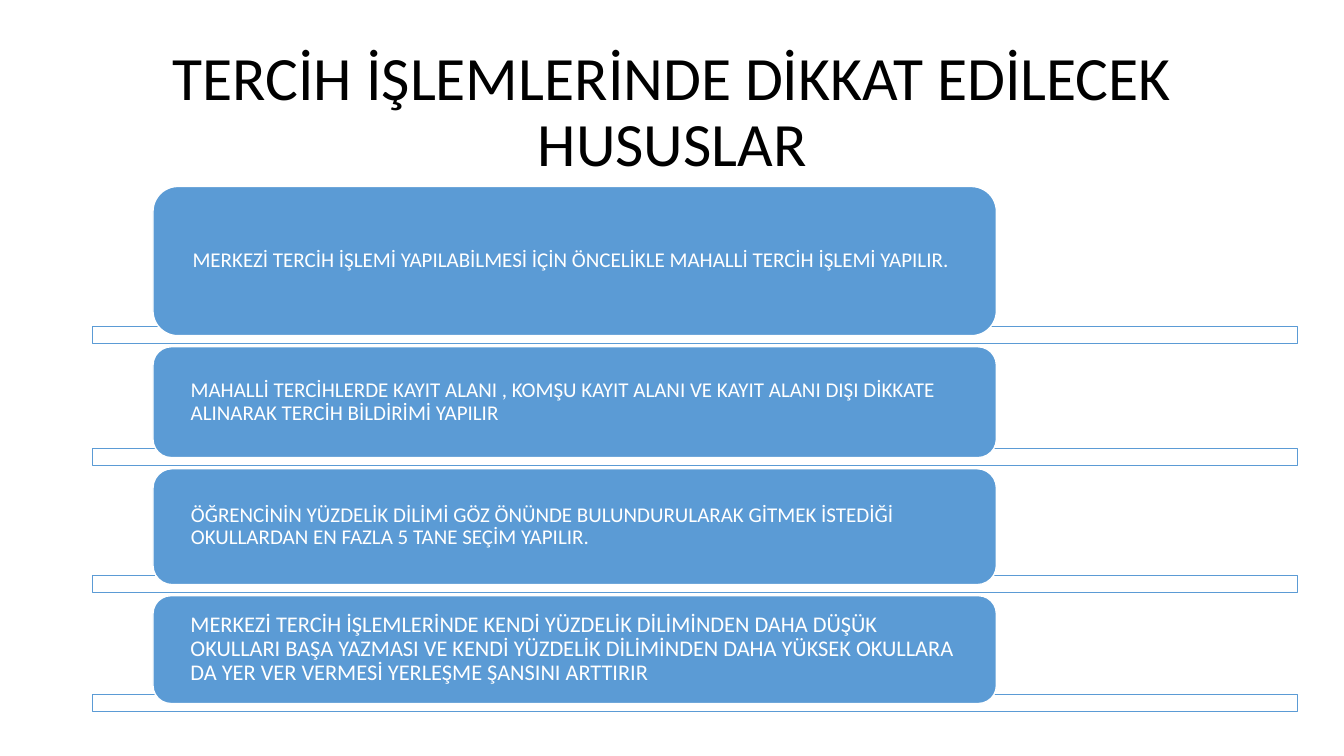
from dataclasses import dataclass

from lxml.etree import SubElement
from pptx import Presentation
from pptx.dml.color import RGBColor
from pptx.enum.shapes import MSO_SHAPE
from pptx.enum.text import MSO_ANCHOR, PP_ALIGN
from pptx.oxml.ns import qn
from pptx.util import Inches, Pt


@dataclass(frozen=True)
class Theme:
    font: str = "Calibri"
    blue: RGBColor = RGBColor(0x5B, 0x9B, 0xD5)
    white: RGBColor = RGBColor(0xFF, 0xFF, 0xFF)
    black: RGBColor = RGBColor(0, 0, 0)
    title: int = 44
    body: int = 15
    body_large: int = 16
    line: int = 1


THEME = Theme()
TITLE = "TERCİH İŞLEMLERİNDE DİKKAT EDİLECEK HUSUSLAR"

# Each card: height in grid rows, type size, text
CARDS = [
    (148, THEME.body,
     "MERKEZİ TERCİH İŞLEMİ YAPILABİLMESİ İÇİN ÖNCELİKLE MAHALLİ TERCİH İŞLEMİ YAPILIR."),
    (110, THEME.body,
     "MAHALLİ TERCİHLERDE KAYIT ALANI , KOMŞU KAYIT ALANI VE KAYIT ALANI DIŞI DİKKATE "
     "ALINARAK TERCİH BİLDİRİMİ YAPILIR"),
    (115, THEME.body,
     "ÖĞRENCİNİN YÜZDELİK DİLİMİ GÖZ ÖNÜNDE BULUNDURULARAK GİTMEK İSTEDİĞİ "
     "OKULLARDAN EN FAZLA 5 TANE SEÇİM YAPILIR."),
    (107, THEME.body_large,
     "MERKEZİ TERCİH İŞLEMLERİNDE KENDİ YÜZDELİK DİLİMİNDEN DAHA DÜŞÜK OKULLARI BAŞA "
     "YAZMASI VE KENDİ YÜZDELİK DİLİMİNDEN DAHA YÜKSEK OKULLARA DA YER VER VERMESİ "
     "YERLEŞME ŞANSINI ARTTIRIR"),
]
GAP, BAR, OVERLAP = 11, 17, 9  # in grid rows
ROWS = sum(rows for rows, _, _ in CARDS) + GAP * (len(CARDS) - 1) + BAR - OVERLAP


def write(shape, text, size, color, align):
    tf = shape.text_frame
    tf.word_wrap = True
    tf.vertical_anchor = MSO_ANCHOR.MIDDLE
    p = tf.paragraphs[0]
    p.text = text
    p.alignment = align
    p.line_spacing = 0.9
    p.font.name = THEME.font
    p.font.size = Pt(size)
    p.font.color.rgb = color
    return tf


def add_box(s, kind, box, fill, line):
    sp = s.shapes.add_shape(kind, *(Inches(v) for v in box))
    sp.shadow.inherit = False
    sp.fill.solid()
    sp.fill.fore_color.rgb = fill
    sp.line.color.rgb = line
    sp.line.width = Pt(THEME.line)
    return sp


def add_title(s, box):
    sp = s.shapes.add_textbox(*(Inches(v) for v in box))
    write(sp, TITLE, THEME.title, THEME.black, PP_ALIGN.CENTER)


def add_card_list(s, box):
    left, top, width, height = box
    row = height / ROWS
    for rows, size, text in CARDS:
        bottom = top + rows * row

        # Pale bar behind the card's lower edge
        bar = add_box(s, MSO_SHAPE.RECTANGLE,
                      (left, bottom - OVERLAP * row, width, BAR * row),
                      THEME.white, THEME.blue)
        color = bar.fill._xPr.find(qn("a:solidFill"))[0]
        SubElement(color, qn("a:alpha"), val="90000")

        # Rounded card with its text
        card = add_box(s, MSO_SHAPE.ROUNDED_RECTANGLE,
                       (left + 0.05 * width, top, 0.7 * width, rows * row),
                       THEME.blue, THEME.white)
        tf = write(card, text, size, THEME.white, PP_ALIGN.LEFT)
        tf.margin_left = tf.margin_right = Inches(0.32)
        tf.margin_top = tf.margin_bottom = 0

        top = bottom + GAP * row


def main():
    prs = Presentation()
    prs.slide_width, prs.slide_height = Inches(13.33), Inches(7.5)
    s = prs.slides.add_slide(prs.slide_layouts[6])
    add_title(s, (0.92, 0.4, 11.5, 1.45))
    add_card_list(s, (0.92, 1.85, 11.95, 5.21))
    prs.save("out.pptx")


if __name__ == "__main__":
    main()
